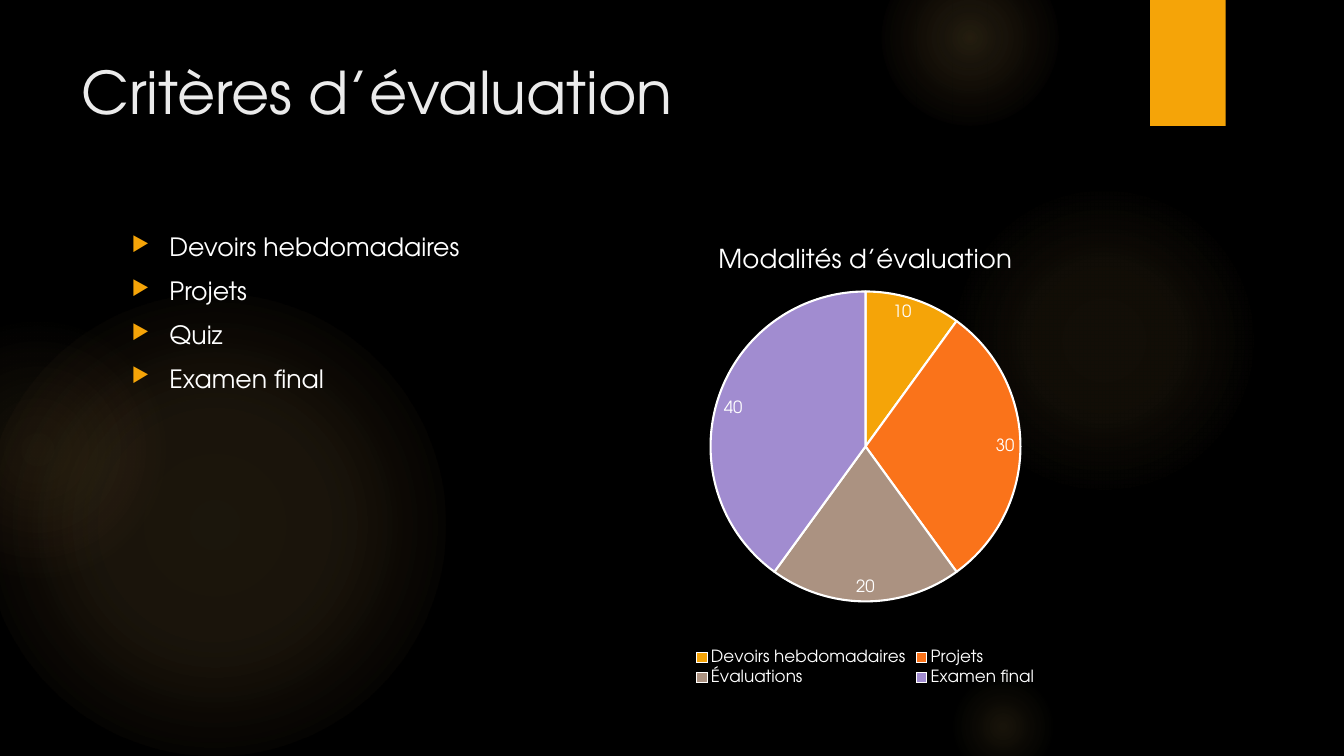
from dataclasses import dataclass

from lxml import etree
from pptx import Presentation
from pptx.chart import data as cd
from pptx.dml.color import RGBColor
from pptx.enum import chart as ch, shapes, text
from pptx.oxml import parse_xml
from pptx.oxml.ns import nsdecls, qn
from pptx.util import Pt


@dataclass(frozen=True)
class Theme:
    back: str = "000000"
    white: str = "FFFFFF"
    head: str = "EBEBEB"
    gold: str = "F5A408"
    glow: str = "FAC96A"
    rose: str = "F59B74"
    pie: tuple = ("F5A408", "FA731A", "AB9281", "A18CD0")
    font: str = "TeX Gyre Adventor"
    big: float = 42
    mid: float = 18
    name: float = 18.6
    small: float = 12


T = Theme()

# left, top, size, then (position %, colour, opacity %) stops
GLOWS = [
    (-12, 210, 330, [(0, T.glow, 11), (36, T.glow, 10), (75, T.glow, 0)]),
    (-66, 228, 186, [(0, T.glow, 8), (36, T.glow, 5), (71, T.rose, 0)]),
    (677.5, 132, 222, [(0, T.glow, 7), (36, T.glow, 6), (69, T.glow, 0)]),
    (630, -36, 126, [(0, T.glow, 14), (36, T.glow, 7), (73, T.glow, 0)]),
    (677.5, 480, 78, [(0, T.glow, 10), (31, T.glow, 5), (66, T.glow, 0)]),
]
TASKS = ["Devoirs hebdomadaires", "Projets", "Quiz", "Examen final"]
SHARES = {"Devoirs hebdomadaires": 10, "Projets": 30,
          "Évaluations": 20, "Examen final": 40}


def rgb(code):
    return RGBColor.from_string(code)


def style(obj, **vals):
    for key, val in vals.items():
        setattr(obj, key, val)


def ink(font, size, tone=T.white):
    style(font, name=T.font, size=Pt(size), bold=False)
    font.color.rgb = rgb(tone)


def plain(slide, kind, box):
    """Add a preset shape with neither line nor shadow."""
    shape = slide.shapes.add_shape(kind, *map(Pt, box))
    shape.shadow.inherit = False
    shape.line.fill.background()
    return shape


def glow(slide, box, stops):
    """Add a round light that fades out from its centre."""
    disc = plain(slide, shapes.MSO_SHAPE.OVAL, box)
    marks = "".join(
        f'<a:gs pos="{pos * 1000}"><a:srgbClr val="{tone}">'
        f'<a:alpha val="{alpha * 1000}"/></a:srgbClr></a:gs>'
        for pos, tone, alpha in stops)
    fill = parse_xml(
        f'<a:gradFill {nsdecls("a")} rotWithShape="1"><a:gsLst>{marks}</a:gsLst>'
        '<a:path path="circle"><a:fillToRect l="50000" t="50000" r="50000" '
        'b="50000"/></a:path></a:gradFill>')
    disc._element.spPr.find(qn("a:prstGeom")).addnext(fill)


def decor(slide):
    fill = slide.background.fill
    fill.solid()
    fill.fore_color.rgb = rgb(T.back)
    for left, top, size, stops in GLOWS:
        glow(slide, (left, top, size, size), stops)
    tab = plain(slide, shapes.MSO_SHAPE.RECTANGLE, (821.5, 0, 54, 90))
    tab.fill.solid()
    tab.fill.fore_color.rgb = rgb(T.gold)


def words(slide, box, lines, size, tone):
    frame = slide.shapes.add_textbox(*map(Pt, box)).text_frame
    style(frame, word_wrap=True, vertical_anchor=text.MSO_ANCHOR.TOP)
    frame.text = "\n".join(lines)
    for para in frame.paragraphs:
        ink(para.runs[0].font, size, tone)
    return frame


def bullets(slide, box, lines):
    frame = words(slide, box, lines, T.mid, T.white)
    for para in frame.paragraphs:
        style(para, space_before=Pt(3.6), space_after=Pt(6))
        props = para._p.get_or_add_pPr()
        props.set("marL", str(Pt(27)))
        props.set("indent", str(-Pt(27)))
        tint = etree.SubElement(props, qn("a:buClr"))
        etree.SubElement(tint, qn("a:srgbClr"), val=T.gold)
        etree.SubElement(props, qn("a:buSzPct"), val="80000")
        etree.SubElement(props, qn("a:buChar"), char="▶")


def place(chart, **sides):
    """Fix the inner plot area as fractions of the chart."""
    area = chart._chartSpace.chart.plotArea
    for old in area.findall(qn("c:layout")):
        area.remove(old)
    parts = "".join(f'<c:{k} val="{v}"/>' for k, v in sides.items())
    area.insert(0, parse_xml(
        f'<c:layout {nsdecls("c")}><c:manualLayout>'
        '<c:layoutTarget val="inner"/><c:xMode val="edge"/>'
        f'<c:yMode val="edge"/>{parts}</c:manualLayout></c:layout>'))


def pie(slide, box, title, shares):
    data = cd.CategoryChartData()
    data.categories = list(shares)
    data.add_series(title, list(shares.values()))
    chart = slide.shapes.add_chart(
        ch.XL_CHART_TYPE.PIE, *map(Pt, box), data).chart
    ink(chart.font, T.small)
    style(chart, has_title=True, has_legend=True)
    chart.chart_title.text_frame.text = title
    ink(chart.chart_title.text_frame.paragraphs[0].runs[0].font, T.name)
    style(chart.legend, position=ch.XL_LEGEND_POSITION.BOTTOM,
          include_in_layout=False)
    ink(chart.legend.font, T.small)
    plot = chart.plots[0]
    style(plot, vary_by_categories=True, has_data_labels=True)
    style(plot.data_labels, show_value=True, show_percentage=False,
          position=ch.XL_LABEL_POSITION.INSIDE_END)
    ink(plot.data_labels.font, T.small)
    for i, tone in enumerate(T.pie):
        form = plot.series[0].points[i].format
        form.fill.solid()
        form.fill.fore_color.rgb = rgb(tone)
        form.line.color.rgb = rgb(T.white)
        form.line.width = Pt(1.5)
    place(chart, x=0.18, y=0.14, w=0.64, h=0.67)


def main():
    deck = Presentation()
    style(deck, slide_width=Pt(960), slide_height=Pt(540))
    slide = deck.slides.add_slide(deck.slide_layouts[6])
    decor(slide)
    words(slide, (51, 36, 741, 110), ["Critères d’évaluation"], T.big, T.head)
    top, wide, high = 162, 346.5, 330.5
    bullets(slide, (87, top, wide, high), TASKS)
    pie(slide, (445, top, wide, high), "Modalités d’évaluation", SHARES)
    deck.save("out.pptx")


if __name__ == "__main__":
    main()
